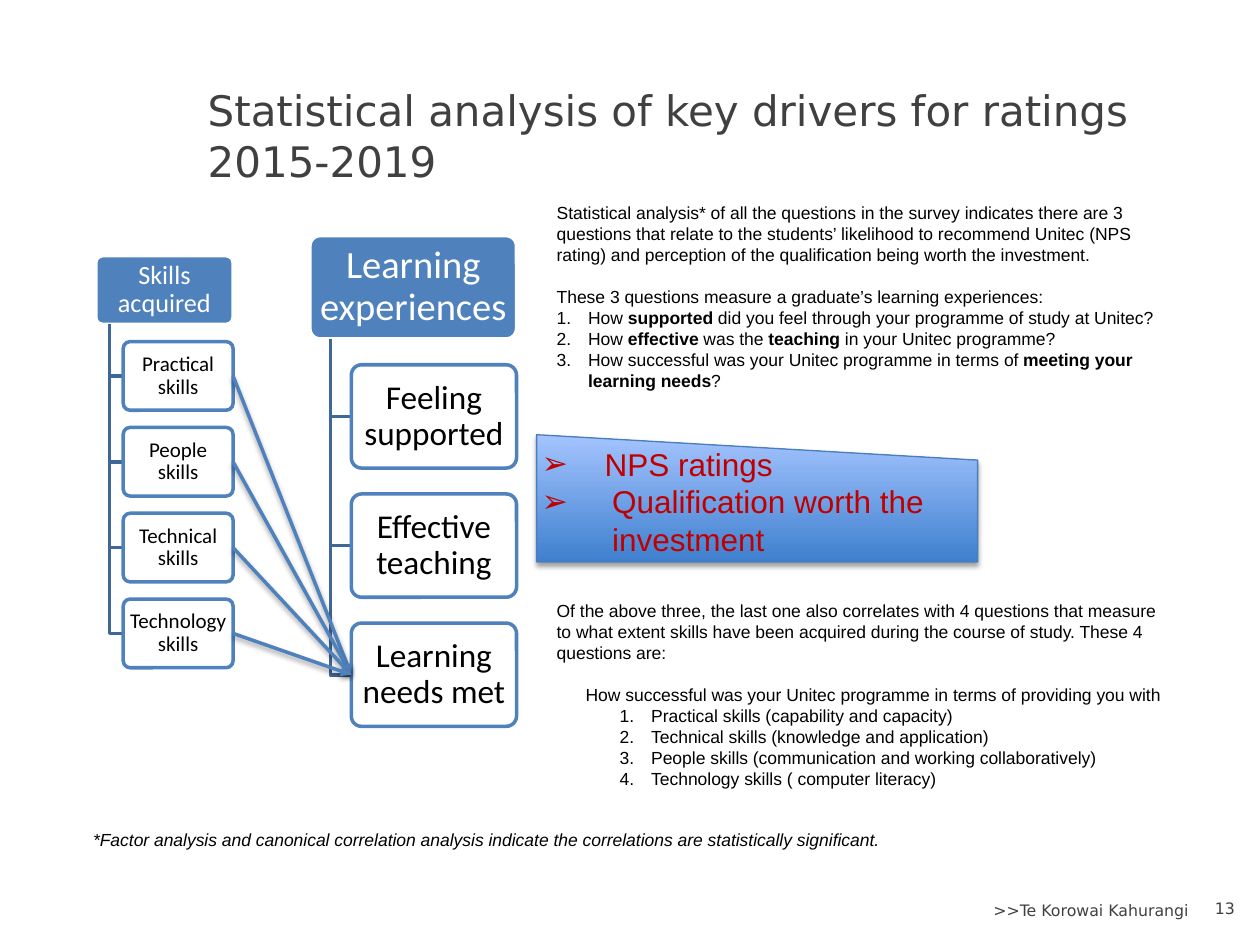
import pptx
import pptx.util
import pptx.dml.color
import pptx.enum.shapes
import pptx.enum.text
import pptx.oxml
import pptx.oxml.ns

Inches, Pt = pptx.util.Inches, pptx.util.Pt
Shape = pptx.enum.shapes.MSO_SHAPE
Align = pptx.enum.text.PP_ALIGN
Anchor = pptx.enum.text.MSO_ANCHOR

COLORS = {
    "blue": "4F81BD", "trunk": "3F6797", "white": "FFFFFF", "black": "000000",
    "grey": "404040", "red": "C00000", "callout_line": "4B7EBC",
    "callout_dark": "3F80CE", "callout_light": "A4C4FF",
}

# Content: a paragraph is a dict whose runs are (text, style)
TITLE = "Statistical analysis of key drivers for ratings 2015-2019"
FOOTER = ">>Te Korowai Kahurangi"
PAGE = "13"
FOOTNOTE = ("*Factor analysis and canonical correlation analysis indicate the "
            "correlations are statistically significant.")

# left, top and width of the heading set the whole tree
TREES = {
    "learning": dict(left=2.46, top=1.87, width=1.64, sizes=(22, 19), inset=(0.05, 0.03),
                     heading="Learning experiences",
                     items=["Feeling supported", "Effective teaching", "Learning needs met"]),
    "skills": dict(left=0.76, top=2.03, width=1.09, sizes=(15, 12), inset=(0.03, 0.02),
                   heading="Skills acquired",
                   items=["Practical skills", "People skills",
                          "Technical skills", "Technology skills"]),
}

NUMBERED = dict(indent=(0.25, -0.25), bullet="number")
SUB_NUMBERED = dict(indent=(0.75, -0.25), bullet="number", level=1)

RATINGS = [
    dict(runs=[("NPS ratings", "")], indent=(0.5, -0.5), bullet="➢"),
    dict(runs=[("Qualification worth the investment", "")], indent=(0.56, -0.56), bullet="➢"),
]
EXPERIENCE_QUESTIONS = [
    dict(runs=[("Statistical analysis* of all the questions in the survey indicates there are 3 "
                "questions that relate to the students’ likelihood to recommend Unitec (NPS "
                "rating) and perception of the qualification being worth the investment.", "")]),
    dict(runs=[("These 3 questions measure a graduate’s learning experiences:", "")], before=12),
    dict(runs=[("How ", ""), ("supported", "bold"),
               (" did you feel through your programme of study at Unitec?", "")], **NUMBERED),
    dict(runs=[("How ", ""), ("effective", "bold"), (" was the ", ""), ("teaching", "bold"),
               (" in your Unitec programme?", "")], **NUMBERED),
    dict(runs=[("How successful was your Unitec programme in terms of ", ""),
               ("meeting your learning needs", "bold"), ("?", "")], **NUMBERED),
]
SKILL_QUESTIONS = [
    dict(runs=[("Of the above three, the last one also correlates with 4 questions that measure "
                "to what extent skills have been acquired during the course of study. These 4 "
                "questions are:", "")]),
    dict(runs=[("How successful was your Unitec programme in terms of providing you with", "")],
         before=12, indent=(0.23, 0)),
] + [dict(runs=[(text, "")], **SUB_NUMBERED) for text in (
    "Practical skills (capability and capacity)",
    "Technical skills (knowledge and application)",
    "People skills (communication and working collaboratively)",
    "Technology skills ( computer literacy)")]


def color(name):
    return pptx.dml.color.RGBColor.from_string(COLORS[name])


def add_element(parent, xml):
    """Append a DrawingML element given as its tag and attributes."""
    namespace = pptx.oxml.ns.nsdecls("a")
    tag, _, rest = xml.partition(" ")
    element = pptx.oxml.parse_xml(f"<a:{tag} {namespace} {rest}/>")
    parent.append(element)
    return element


def add_shadow(properties, distance):
    effects = properties.find(pptx.oxml.ns.qn("a:effectLst"))
    if effects is None:
        effects = add_element(properties, "effectLst")
    shadow = add_element(effects, f'outerShdw blurRad="{Pt(3.1)}" dist="{Pt(distance)}" '
                                  'dir="5400000" rotWithShape="0"')
    black = add_element(shadow, f'srgbClr val="{COLORS["black"]}"')
    add_element(black, 'alpha val="36000"')


def fill_text(frame, paragraphs, size, font, ink, align=Align.LEFT, anchor=Anchor.TOP,
              spacing=None):
    frame.word_wrap = True
    frame.vertical_anchor = anchor
    for index, content in enumerate(paragraphs):
        paragraph = frame.add_paragraph() if index else frame.paragraphs[0]
        paragraph.alignment = align
        paragraph.level = content.get("level", 0)
        if spacing:
            paragraph.line_spacing = spacing
        if "before" in content:
            paragraph.space_before = Pt(content["before"])
        properties = paragraph._p.get_or_add_pPr()
        if "indent" in content:
            margin, first = content["indent"]
            properties.set("marL", str(Inches(margin)))
            properties.set("indent", str(Inches(first)))
        bullet = content.get("bullet")
        if bullet == "number":
            add_element(properties, 'buAutoNum type="arabicPeriod"')
        elif bullet:
            add_element(properties, 'buFont typeface="Arial"')
            add_element(properties, f'buChar char="{bullet}"')
        for text, style in content["runs"]:
            run = paragraph.add_run()
            run.text = text
            run.font.size, run.font.name = Pt(size), font
            run.font.color.rgb = color(ink)
            if style == "bold":
                run.font.bold = True
            elif style == "italic":
                run.font.italic = True


def add_text(slide, box, paragraphs, size, font, ink, **layout):
    shape = slide.shapes.add_textbox(*map(Inches, box))
    fill_text(shape.text_frame, paragraphs, size, font, ink, **layout)


def add_node(slide, box, text, size, inset, heading):
    shape = slide.shapes.add_shape(Shape.ROUNDED_RECTANGLE, *map(Inches, box))
    shape.adjustments[0] = 0.1
    shape.shadow.inherit = False
    shape.fill.solid()
    shape.fill.fore_color.rgb = color("blue" if heading else "white")
    shape.line.color.rgb = color("white" if heading else "blue")
    shape.line.width = Pt(2)
    frame = shape.text_frame
    frame.margin_left = frame.margin_right = Inches(inset[0])
    frame.margin_top = frame.margin_bottom = Inches(inset[1])
    fill_text(frame, [dict(runs=[(text, "")])], size, "Calibri",
              "white" if heading else "black", Align.CENTER, Anchor.MIDDLE, 0.9)
    return shape


def add_tree(slide, left, top, width, sizes, inset, heading, items):
    """Heading twice as wide as high; items are 80% wide and 1.25 heights apart."""
    height = width / 2
    add_node(slide, (left, top, width, height), heading, sizes[0], inset, True)
    trunk, item_left = left + 0.1 * width, left + 0.2 * width
    nodes = []
    for number, text in enumerate(items, 1):
        item_top = top + 1.25 * height * number
        middle = item_top + height / 2
        builder = slide.shapes.build_freeform(Inches(trunk), Inches(top + height))
        builder.add_line_segments([(Inches(trunk), Inches(middle)),
                                   (Inches(item_left), Inches(middle))], close=False)
        branch = builder.convert_to_shape()
        branch.shadow.inherit = False
        branch.fill.background()
        branch.line.color.rgb = color("trunk")
        branch.line.width = Pt(2)
        nodes.append(add_node(slide, (item_left, item_top, 0.8 * width, height),
                              text, sizes[1], inset, False))
    return nodes


def add_callout(slide):
    shape = slide.shapes.add_shape(Shape.FLOWCHART_MANUAL_INPUT,
                                   *map(Inches, (4.26, 3.45, 3.5, 1.01)))
    shape._element.spPr.get_or_add_xfrm().set("flipH", "1")
    shape.fill.gradient()
    shape.fill.gradient_angle = 90
    for stop, name in zip(shape.fill.gradient_stops, ("callout_dark", "callout_light")):
        stop.color.rgb = color(name)
    shape.line.color.rgb = color("callout_line")
    shape.line.width = Pt(0.75)
    shape.shadow.inherit = False
    add_shadow(shape._element.spPr, 1.8)


def add_arrow(slide, source, target):
    arrow = slide.shapes.add_connector(pptx.enum.shapes.MSO_CONNECTOR.STRAIGHT, 0, 0, 0, 0)
    arrow.begin_connect(source, 3)
    arrow.end_connect(target, 1)
    arrow.line.color.rgb = color("blue")
    arrow.line.width = Pt(2)
    add_element(arrow.line._get_or_add_ln(), 'tailEnd type="triangle"')
    add_shadow(arrow._element.spPr, 1.6)


def main():
    presentation = pptx.Presentation()
    presentation.slide_width, presentation.slide_height = Inches(10), Inches(7.5)
    slide = presentation.slides.add_slide(presentation.slide_layouts[6])

    # Title and footer
    add_callout(slide)
    add_text(slide, (1.55, 0.51, 7.87, 1.13), [dict(runs=[(TITLE, "")])],
             24, "DejaVu Sans", "grey", anchor=Anchor.MIDDLE)
    for box, text in (((5.38, 7.1, 4.15, 0.25), FOOTER), ((9.44, 7.08, 0.46, 0.25), PAGE)):
        add_text(slide, box, [dict(runs=[(text, "")])], 9, "DejaVu Sans", "grey",
                 align=Align.RIGHT, anchor=Anchor.MIDDLE)

    # Trees
    nodes = {name: add_tree(slide, **tree) for name, tree in TREES.items()}

    # Explanations
    add_text(slide, (4.2, 3.48, 3.62, 1.01), RATINGS, 18, "Arial", "red")
    add_text(slide, (4.32, 1.55, 5.1, 1.78), EXPERIENCE_QUESTIONS, 10, "Arial", "black")
    add_text(slide, (4.32, 4.71, 5.1, 1.62), SKILL_QUESTIONS, 10, "Arial", "black")

    # Every skill leads to the last learning experience
    for skill in nodes["skills"]:
        add_arrow(slide, skill, nodes["learning"][-1])

    add_text(slide, (0.64, 6.53, 8.62, 0.27), [dict(runs=[(FOOTNOTE, "italic")])],
             10, "Arial", "black")
    presentation.save("out.pptx")


if __name__ == "__main__":
    main()
